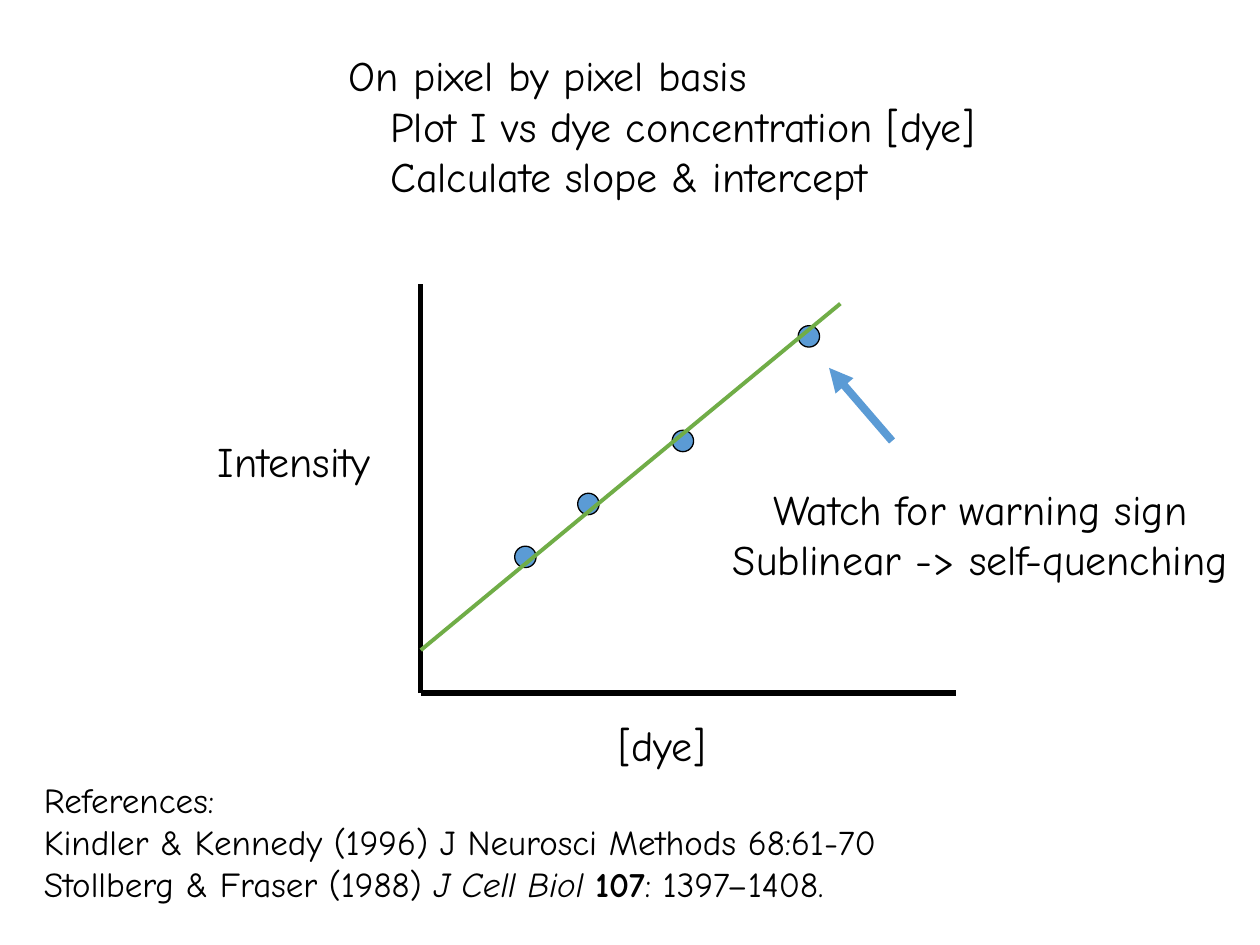
from dataclasses import dataclass

from lxml.etree import SubElement
from pptx import Presentation
from pptx.dml.color import RGBColor
from pptx.enum.shapes import MSO_CONNECTOR as Wire, MSO_SHAPE as Shape
from pptx.enum.text import MSO_ANCHOR as Anchor, PP_ALIGN as Align
from pptx.oxml.ns import qn
from pptx.util import Inches, Pt


@dataclass(frozen=True)
class Theme:
    """Colours, font and type sizes of the slide."""
    ink: RGBColor = RGBColor(0, 0, 0)
    blue: RGBColor = RGBColor(0x5B, 0x9B, 0xD5)
    green: RGBColor = RGBColor(0x70, 0xAD, 0x47)
    font: str = "Comic Neue"
    body: int = 24
    small: int = 20


@dataclass(frozen=True)
class Box:
    """A region in inches."""
    left: float
    top: float
    width: float
    height: float

    def inner(self, left, top, width, height):
        """Return a box placed relative to this one."""
        return Box(self.left + left, self.top + top, width, height)

    def lengths(self):
        """Return the four sides as lengths."""
        return [Inches(n) for n in (self.left, self.top, self.width, self.height)]


THEME = Theme()


def add_text(slide, box, lines, size=THEME.body, align=Align.LEFT, indents=()):
    """Write lines of (text, style) runs into a text box."""
    frame = slide.shapes.add_textbox(*box.lengths()).text_frame
    frame.word_wrap = True
    frame.vertical_anchor = Anchor.MIDDLE
    for index, runs in enumerate(lines):
        para = frame.paragraphs[0] if index == 0 else frame.add_paragraph()
        para.alignment = align
        if index in indents:
            para._p.get_or_add_pPr().set("marL", str(Inches(0.33)))
        for text, style in runs:
            run = para.add_run()
            run.text = text
            font = run.font
            font.name, font.size = THEME.font, Pt(size)
            font.bold, font.italic = style == "bold", style == "italic"
            font.color.rgb = THEME.ink


def add_line(slide, box, start, end, color, width, arrow=False):
    """Draw a line between two points relative to the box."""
    ends = [Inches(n) for x, y in (start, end) for n in (box.left + x, box.top + y)]
    wire = slide.shapes.add_connector(Wire.STRAIGHT, *ends)
    wire.line.color.rgb = color
    wire.line.width = Pt(width)
    if arrow:
        SubElement(wire.line._get_or_add_ln(), qn("a:tailEnd"), type="triangle")
    SubElement(wire._element.spPr, qn("a:effectLst"))


def add_dot(slide, box, x, y, size=0.17):
    """Draw a data point centred at x, y in the box."""
    area = box.inner(x - size / 2, y - size / 2, size, size)
    dot = slide.shapes.add_shape(Shape.OVAL, *area.lengths())
    dot.shadow.inherit = False
    dot.fill.solid()
    dot.fill.fore_color.rgb = THEME.blue
    dot.line.color.rgb = THEME.ink
    dot.line.width = Pt(0.75)


def add_steps(slide, box):
    """Write the steps above the plot."""
    steps = ["On pixel by pixel basis", "Plot I vs dye concentration [dye]",
             "Calculate slope & intercept"]
    add_text(slide, box, [[(step, "")] for step in steps], indents=(1, 2))


def add_plot(slide, box):
    """Draw the axes, their labels, the points and the fitted line."""
    origin = (0, box.height)
    for end in ((0, 0), (box.width, box.height)):
        add_line(slide, box, origin, end, THEME.ink, 3)
    labels = [("Intensity", (-1.84, 1.16, 1.67, 0.5)),
              ("[dye]", (1.41, 3.41, 1.01, 0.5))]
    for text, place in labels:
        add_text(slide, box.inner(*place), [[(text, "")]], align=Align.CENTER)
    for x, y in ((0.83, 2.17), (1.33, 1.75), (2.08, 1.25), (3.08, 0.42)):
        add_dot(slide, box, x, y)
    add_line(slide, box, (0, 2.91), (3.33, 0.16), THEME.green, 2.25)


def add_warning(slide, box):
    """Write the warning with an arrow up to the last point."""
    lines = ["Watch for warning sign", "Sublinear -> self-quenching"]
    add_text(slide, box, [[(line, "")] for line in lines], align=Align.CENTER)
    add_line(slide, box, (1.52, -0.28), (1.02, -0.86), THEME.blue, 4.5, arrow=True)


def add_sources(slide, box):
    """List the references."""
    lines = [
        [("References:", "")],
        [("Kindler & Kennedy (1996) J Neurosci Methods 68:61-70", "")],
        [("Stollberg & Fraser (1988) ", ""), ("J Cell Biol ", "italic"),
         ("107", "bold"), (": 1397–1408.", "")],
    ]
    add_text(slide, box, lines, THEME.small)


def main():
    """Build and save the slide."""
    deck = Presentation()
    deck.slide_width, deck.slide_height = Inches(10), Inches(7.5)
    slide = deck.slides.add_slide(deck.slide_layouts[6])
    add_plot(slide, Box(3.34, 2.25, 4.25, 3.25))
    add_steps(slide, Box(2.67, 0.34, 5.64, 1.31))
    add_sources(slide, Box(0.25, 6.12, 8.39, 1.11))
    add_warning(slide, Box(5.56, 3.78, 4.44, 0.91))
    deck.save("out.pptx")


if __name__ == "__main__":
    main()
